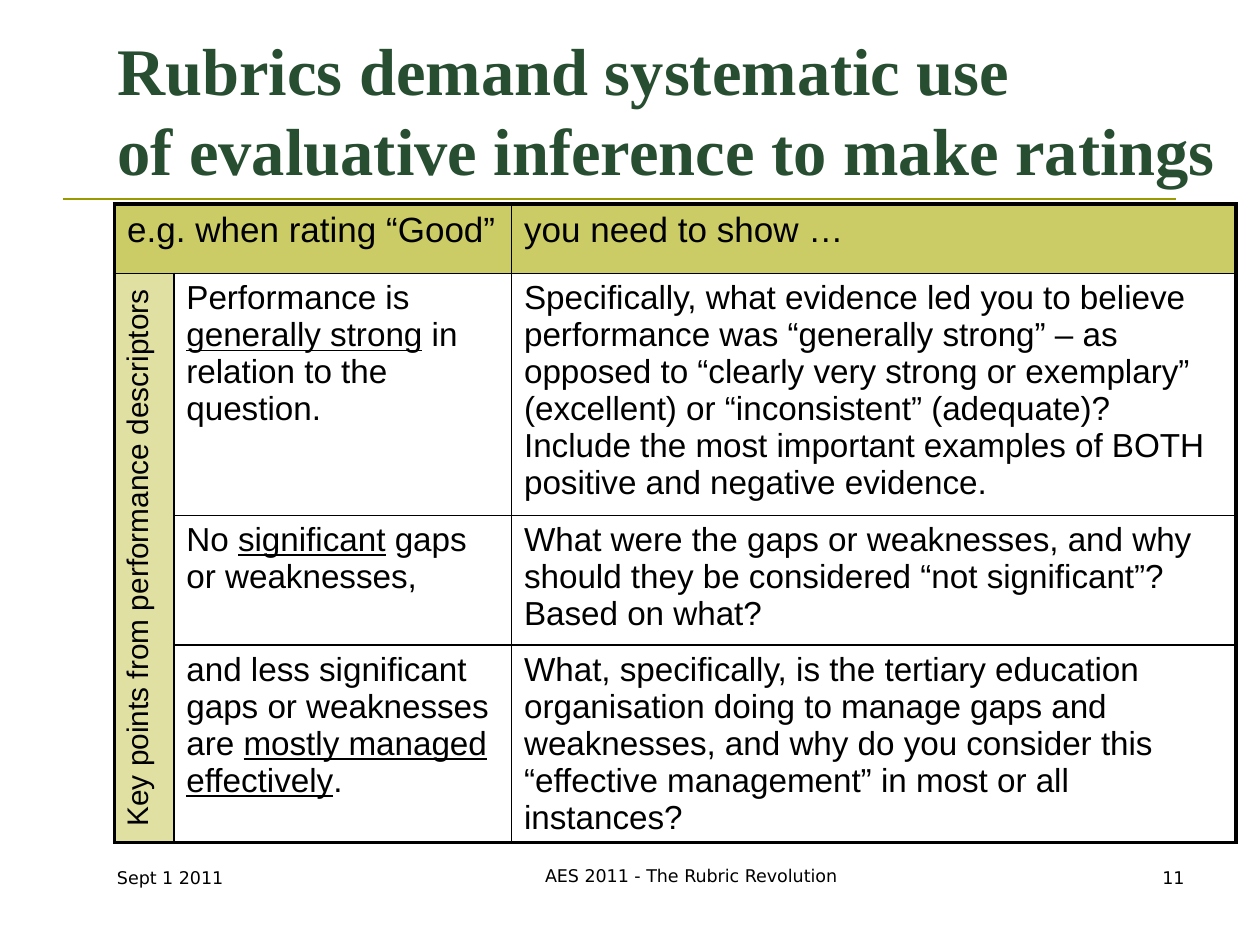
from dataclasses import dataclass

from lxml import etree
from pptx import Presentation
from pptx import util as u
from pptx.dml.color import RGBColor
from pptx.enum import shapes, text
from pptx.oxml import ns

UNIT = u.Inches(0.1)


@dataclass(frozen=True)
class Theme:
    title: str = "284E31"
    ink: str = "000000"
    rule: str = "999900"
    header: str = "CCCC66"
    side: str = "E0E0A3"
    title_size: float = 38
    header_size: float = 20
    body_size: float = 19
    side_size: float = 17
    footer_size: float = 10
    title_font: str = "Times New Roman"
    body_font: str = "Arial"
    footer_font: str = "DejaVu Sans"
    outer: float = 2.25
    inner: float = 1


@dataclass(frozen=True)
class Region:
    left: float
    top: float
    width: float
    height: float

    def lengths(self) -> list[int]:
        return [grid(n) for n in (self.left, self.top, self.width, self.height)]


@dataclass(frozen=True)
class Entry:
    row: int
    column: int
    words: str
    size: float
    fill: str = ""
    rows: int = 1
    columns: int = 1


@dataclass(frozen=True)
class Footer:
    words: str
    region: Region
    align: text.PP_ALIGN


THEME = Theme()
TITLE = ("Rubrics demand systematic use", "of evaluative inference to make ratings")
TITLE_REGION = Region(8.3, 3, 91.7, 12.5)
TABLE_REGION = Region(9.1, 16.2, 89, 49.2)
COLUMNS = (4.7, 26.8, 57.5)
ROWS = (5.5, 19.2, 10.3, 14.2)
POINTS = (
    ("Performance is _generally strong_ in relation to the question.",
     "Specifically, what evidence led you to believe performance was “generally strong” – as "
     "opposed to “clearly very strong or exemplary” (excellent) or “inconsistent” (adequate)? "
     "Include the most important examples of BOTH positive and negative evidence."),
    ("No _significant_ gaps or weaknesses,",
     "What were the gaps or weaknesses, and why should they be considered "
     "“not significant”? Based on what?"),
    ("and less significant gaps or weaknesses are _mostly managed effectively_.",
     "What, specifically, is the tertiary education organisation doing to manage gaps and "
     "weaknesses, and why do you consider this “effective management” in most or all instances?"),
)
HEADINGS = (
    Entry(0, 0, "e.g. when rating “Good”", THEME.header_size, THEME.header, columns=2),
    Entry(0, 2, "you need to show …", THEME.header_size, THEME.header),
)
SIDE = Entry(1, 0, "Key points from performance descriptors", THEME.side_size, THEME.side, rows=3)
FOOTERS = (
    Footer("Sept 1 2011", Region(8.3, 68.3, 20.1, 5), text.PP_ALIGN.LEFT),
    Footer("AES 2011 - The Rubric Revolution", Region(39, 68.2, 31.7, 5), text.PP_ALIGN.CENTER),
    Footer("11", Region(78.4, 68.3, 16.6, 5), text.PP_ALIGN.RIGHT),
)


def grid(count: float) -> int:
    return round(count * UNIT)


def apply(target, values: dict) -> None:
    for name, value in values.items():
        setattr(target, name, value)


def style(font, name: str, size: float, color: str, **extra) -> None:
    apply(font, {"name": name, "size": u.Pt(size), **extra})
    font.color.rgb = RGBColor.from_string(color)


def write_marked(para, words: str, size: float) -> None:
    for index, part in enumerate(words.split("_")):
        span = para.add_run()
        span.text = part
        style(span.font, THEME.body_font, size, THEME.ink, underline=index % 2 == 1)


def add_borders(cell, entry: Entry) -> None:
    edges = {
        "L": entry.column == 0,
        "R": entry.column + entry.columns == len(COLUMNS),
        "T": entry.row == 0,
        "B": entry.row + entry.rows == len(ROWS),
    }
    properties = cell._tc.get_or_add_tcPr()
    for index, (side, outside) in enumerate(edges.items()):
        width = u.Pt(THEME.outer if outside else THEME.inner)
        line = etree.Element(ns.qn(f"a:ln{side}"), w=str(int(width)))
        fill = etree.SubElement(line, ns.qn("a:solidFill"))
        etree.SubElement(fill, ns.qn("a:srgbClr"), val=THEME.ink)
        properties.insert(index, line)


def fill_cell(table, entry: Entry) -> None:
    cell = table.cell(entry.row, entry.column)
    last_row, last_column = entry.row + entry.rows - 1, entry.column + entry.columns - 1
    if (last_row, last_column) != (entry.row, entry.column):
        cell.merge(table.cell(last_row, last_column))
    write_marked(cell.text_frame.paragraphs[0], entry.words, entry.size)
    for row in range(entry.row, last_row + 1):
        for column in range(entry.column, last_column + 1):
            part = table.cell(row, column)
            if entry.fill:
                part.fill.solid()
                part.fill.fore_color.rgb = RGBColor.from_string(entry.fill)
            else:
                part.fill.background()
            add_borders(part, entry)


def add_rubric(page) -> None:
    table = page.shapes.add_table(len(ROWS), len(COLUMNS), *TABLE_REGION.lengths()).table
    apply(table, {"first_row": False, "horz_banding": False})
    for column, width in zip(table.columns, COLUMNS):
        column.width = grid(width)
    for row, height in zip(table.rows, ROWS):
        row.height = grid(height)
    points = [
        Entry(row, column, words, THEME.body_size)
        for row, pair in enumerate(POINTS, 1)
        for column, words in enumerate(pair, 1)
    ]
    for entry in (*HEADINGS, SIDE, *points):
        fill_cell(table, entry)
    side = table.cell(SIDE.row, SIDE.column)
    side._tc.get_or_add_tcPr().set("vert", "vert270")
    side.text_frame.paragraphs[0].alignment = text.PP_ALIGN.CENTER


def add_title(page) -> None:
    box = page.shapes.title
    apply(box, dict(zip(("left", "top", "width", "height"), TITLE_REGION.lengths())))
    frame = box.text_frame
    frame.text = "\v".join(TITLE)
    apply(frame, {"vertical_anchor": text.MSO_ANCHOR.BOTTOM, "word_wrap": True,
                  "auto_size": text.MSO_AUTO_SIZE.NONE})
    para = frame.paragraphs[0]
    para.alignment = text.PP_ALIGN.LEFT
    for span in para.runs:
        style(span.font, THEME.title_font, THEME.title_size, THEME.title, bold=True)


def add_rule(page) -> None:
    start, end, level = grid(5), grid(93.3), grid(15.8)
    rule = page.shapes.add_connector(shapes.MSO_CONNECTOR.STRAIGHT, start, level, end, level)
    rule.line.color.rgb = RGBColor.from_string(THEME.rule)
    rule.line.width = u.Pt(1.5)
    etree.SubElement(rule._element.spPr, ns.qn("a:effectLst"))


def add_footer(page, footer: Footer) -> None:
    frame = page.shapes.add_textbox(*footer.region.lengths()).text_frame
    frame.word_wrap = True
    para = frame.paragraphs[0]
    para.alignment = footer.align
    span = para.add_run()
    span.text = footer.words
    style(span.font, THEME.footer_font, THEME.footer_size, THEME.ink)


def main() -> None:
    deck = Presentation()
    apply(deck, {"slide_width": grid(100), "slide_height": grid(75)})
    page = deck.slides.add_slide(deck.slide_layouts[5])
    add_rule(page)
    add_title(page)
    add_rubric(page)
    for footer in FOOTERS:
        add_footer(page, footer)
    deck.save("out.pptx")


if __name__ == "__main__":
    main()
